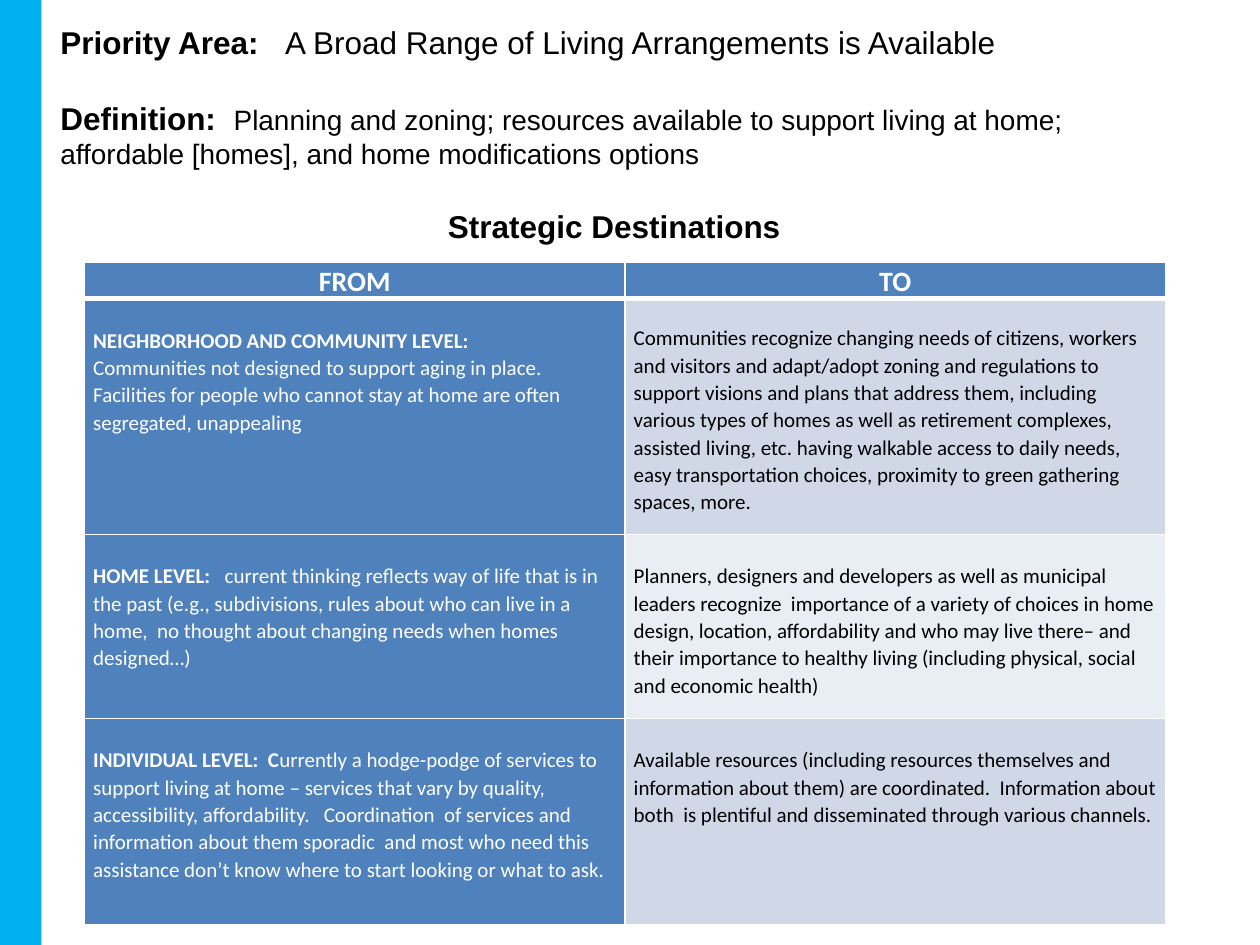
from lxml.etree import SubElement
from pptx import Presentation
from pptx.dml.color import RGBColor
from pptx.enum.shapes import MSO_SHAPE
from pptx.enum.text import MSO_ANCHOR, MSO_AUTO_SIZE, PP_ALIGN
from pptx.oxml.ns import qn
from pptx.util import Inches, Pt

WHITE, BLACK, BLUE, SKY = "FFFFFF", "000000", "4F81BD", "00B0F0"
BANDS = ["D0D8E8", "E9EDF4"]

# Each paragraph is a list of (text, size, bold) runs.
TITLE = [
    [("Priority Area:   ", 18, True),
     ("A Broad Range of Living Arrangements is Available", 18, False)],
    [("Definition:  ", 18, True),
     ("Planning and zoning; resources available to support living at home; "
      "affordable [homes], and home modifications options", 16, False)],
]
HEADING = [[("Strategic Destinations", 18, True)]]
HEADERS = ["FROM", "TO"]
ROWS = [
    ([[("NEIGHBORHOOD AND COMMUNITY LEVEL:", 12, True)],
      [("Communities not designed to support aging in place. Facilities for people "
        "who cannot stay at home are often segregated, unappealing", 12, False)]],
     [[("Communities recognize changing needs of citizens, workers and visitors and "
        "adapt/adopt zoning and regulations to support visions and plans that address "
        "them, including various types of homes as well as retirement complexes, "
        "assisted living, etc. having walkable access to daily needs,  easy "
        "transportation choices, proximity to green gathering spaces, more.",
        12, False)]]),
    ([[("HOME LEVEL:   ", 12, True),
       ("current thinking reflects way of life that is in the past (e.g., "
        "subdivisions, rules about who can live in a home,  no thought about changing "
        "needs when homes designed…)", 12, False)]],
     [[("Planners, designers and developers as well as municipal leaders recognize  "
        "importance of a variety of choices in home design, location, affordability "
        "and who may live there– and their importance to healthy living (including "
        "physical, social and economic health)", 12, False)]]),
    ([[("INDIVIDUAL LEVEL:  C", 12, True),
       ("urrently a hodge-podge of services to support living at home – services that "
        "vary by quality, accessibility, affordability.   Coordination  of services "
        "and information about them sporadic  and most who need this assistance don’t "
        "know where to start looking or what to ask.", 12, False)]],
     [[("Available resources (including resources themselves and information about "
        "them) are coordinated.  Information about both  is plentiful and disseminated "
        "through various channels.", 12, False)]]),
]
ROW_HEIGHTS = [0.28, 1.87, 1.46, 1.64]
COL_WIDTH = 4.29


def rgb(value):
    return RGBColor.from_string(value)


def write(tf, paragraphs, font, color, align=PP_ALIGN.LEFT, spacing=None):
    for i, runs in enumerate(paragraphs):
        p = tf.paragraphs[0] if i == 0 else tf.add_paragraph()
        p.alignment = align
        if spacing:
            p.line_spacing = spacing
        for text, size, bold in runs:
            r = p.add_run()
            r.text = text
            r.font.name, r.font.size, r.font.bold = font, Pt(size), bold
            r.font.color.rgb = rgb(color)


def format_cell(cell, fill, bottom=1, top=1):
    """Set white borders, the fill and the margins of a cell."""
    tc_pr = cell._tc.get_or_add_tcPr()
    for side, width in (("L", 1), ("R", 1), ("T", top), ("B", bottom)):
        ln = SubElement(tc_pr, qn(f"a:ln{side}"), w=str(Pt(width)))
        SubElement(SubElement(ln, qn("a:solidFill")), qn("a:srgbClr"), val=WHITE)
    cell.fill.solid()
    cell.fill.fore_color.rgb = rgb(fill)
    cell.margin_left = cell.margin_right = Inches(0.07)
    cell.margin_top = cell.margin_bottom = 0


prs = Presentation()
prs.slide_width, prs.slide_height = Inches(10), Inches(7.5)
s = prs.slides.add_slide(prs.slide_layouts[5])

title = s.shapes.title
title.left, title.top = Inches(0.38), Inches(-0.21)
title.width, title.height = Inches(9.08), Inches(2.69)
tf = title.text_frame
tf.word_wrap, tf.auto_size = True, MSO_AUTO_SIZE.NONE
tf.vertical_anchor, tf.margin_top = MSO_ANCHOR.TOP, Inches(0.39)
write(tf, TITLE, "Arial", BLACK)
tf.paragraphs[1].space_before = Pt(22)

table = s.shapes.add_table(len(ROW_HEIGHTS), len(HEADERS), Inches(0.67), Inches(2.08),
                           Inches(COL_WIDTH * len(HEADERS)),
                           Inches(sum(ROW_HEIGHTS))).table
for col in table.columns:
    col.width = Inches(COL_WIDTH)
for row, height in zip(table.rows, ROW_HEIGHTS):
    row.height = Inches(height)
for c, text in enumerate(HEADERS):
    cell = table.cell(0, c)
    format_cell(cell, BLUE, bottom=3)
    cell.vertical_anchor = MSO_ANCHOR.MIDDLE
    write(cell.text_frame, [[(text, 16, True)]], "Calibri", WHITE, PP_ALIGN.CENTER, 1.07)
for i, row in enumerate(ROWS):
    looks = [(BLUE, WHITE), (BANDS[i % 2], BLACK)]
    for c, (paragraphs, (fill, color)) in enumerate(zip(row, looks)):
        cell = table.cell(i + 1, c)
        format_cell(cell, fill, top=3 if i == 0 else 1)
        cell.margin_top = Inches(0.2 if (i, c) == (0, 1) else 0.22)
        write(cell.text_frame, paragraphs, "Calibri", color, spacing=1.07)

heading = s.shapes.add_textbox(Inches(0.54), Inches(1.59), Inches(8.67), Inches(0.4))
heading.text_frame.word_wrap = True
write(heading.text_frame, HEADING, "Arial", BLACK, PP_ALIGN.CENTER)

bar = s.shapes.add_shape(MSO_SHAPE.RECTANGLE, 0, 0, Inches(0.33), prs.slide_height)
bar.shadow.inherit = False
bar.fill.solid()
bar.fill.fore_color.rgb = rgb(SKY)
bar.line.fill.background()

prs.save("out.pptx")
